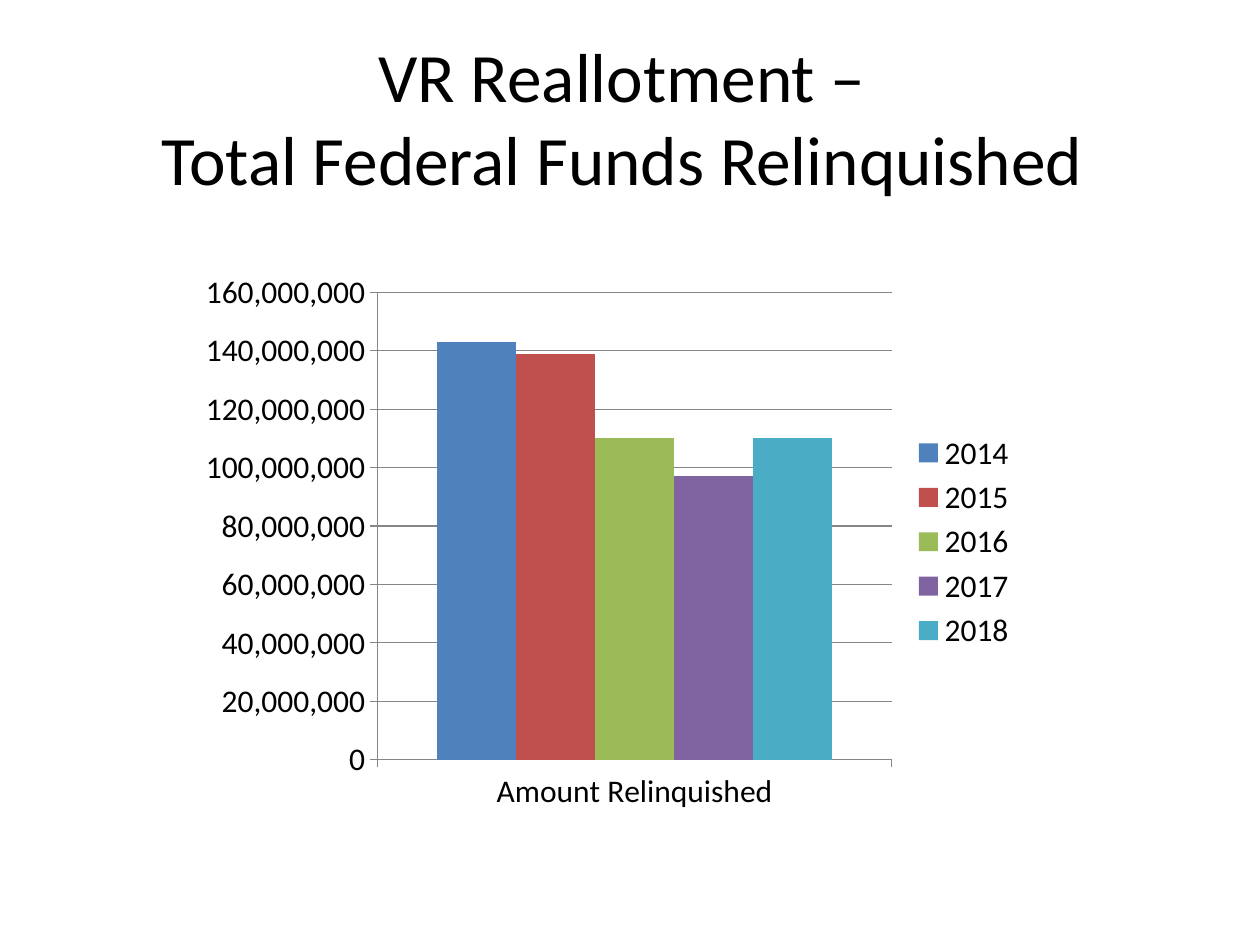
from pptx import Presentation
from pptx.chart.data import CategoryChartData
from pptx.dml.color import RGBColor
from pptx.enum.chart import XL_CHART_TYPE, XL_LEGEND_POSITION, XL_TICK_MARK
from pptx.enum.text import MSO_ANCHOR, MSO_AUTO_SIZE, PP_ALIGN
from pptx.util import Inches, Pt

FONT = "Calibri"
BLACK = RGBColor(0x00, 0x00, 0x00)
GRAY = RGBColor(0x86, 0x86, 0x86)

TITLE_LINES = ["VR Reallotment – ", "Total Federal Funds Relinquished "]
CATEGORY = "Amount Relinquished"
RELINQUISHED = [
    ("2014", 143_000_000, RGBColor(0x4F, 0x81, 0xBD)),
    ("2015", 139_000_000, RGBColor(0xC0, 0x50, 0x4D)),
    ("2016", 110_000_000, RGBColor(0x9B, 0xBB, 0x59)),
    ("2017", 97_000_000, RGBColor(0x80, 0x64, 0xA2)),
    ("2018", 110_000_000, RGBColor(0x4B, 0xAC, 0xC6)),
]


def style_font(font, size):
    font.name = FONT
    font.size = Pt(size)
    font.color.rgb = BLACK


def style_line(line):
    line.color.rgb = GRAY
    line.width = Pt(0.75)


def add_title(slide):
    title = slide.shapes.title
    title.left, title.top = Inches(0.5), Inches(0.3)
    title.width, title.height = Inches(9), Inches(1.25)
    tf = title.text_frame
    tf.word_wrap = True
    tf.auto_size = MSO_AUTO_SIZE.NONE
    tf.vertical_anchor = MSO_ANCHOR.MIDDLE
    p = tf.paragraphs[0]
    p.alignment = PP_ALIGN.CENTER
    for i, line in enumerate(TITLE_LINES):
        if i:
            p.add_line_break()
        r = p.add_run()
        r.text = line
        style_font(r.font, 39.6)


def add_funds_chart(slide):
    data = CategoryChartData(number_format="#,##0")
    data.categories = [CATEGORY]
    for year, amount, _ in RELINQUISHED:
        data.add_series(year, [amount])
    chart = slide.shapes.add_chart(
        XL_CHART_TYPE.COLUMN_CLUSTERED,
        Inches(1.5), Inches(2.08), Inches(6.67), Inches(4.44), data,
    ).chart
    style_font(chart.font, 18)
    chart.has_title = False
    chart.has_legend = True
    chart.legend.position = XL_LEGEND_POSITION.RIGHT
    chart.legend.include_in_layout = False

    plot = chart.plots[0]
    plot.gap_width = 150
    plot.overlap = 0
    plot.vary_by_categories = False
    for series, (_, _, color) in zip(plot.series, RELINQUISHED):
        series.format.fill.solid()
        series.format.fill.fore_color.rgb = color

    for axis in (chart.category_axis, chart.value_axis):
        axis.major_tick_mark = XL_TICK_MARK.OUTSIDE
        axis.minor_tick_mark = XL_TICK_MARK.NONE
        style_line(axis.format.line)
    values = chart.value_axis
    values.minimum_scale, values.maximum_scale = 0, 160_000_000
    values.major_unit = 20_000_000
    values.has_major_gridlines = True
    style_line(values.major_gridlines.format.line)
    values.tick_labels.number_format = "#,##0"
    values.tick_labels.number_format_is_linked = False


def main():
    prs = Presentation()
    prs.slide_width, prs.slide_height = Inches(10), Inches(7.5)
    s = prs.slides.add_slide(prs.slide_layouts[5])
    add_title(s)
    add_funds_chart(s)
    prs.save("out.pptx")


if __name__ == "__main__":
    main()
